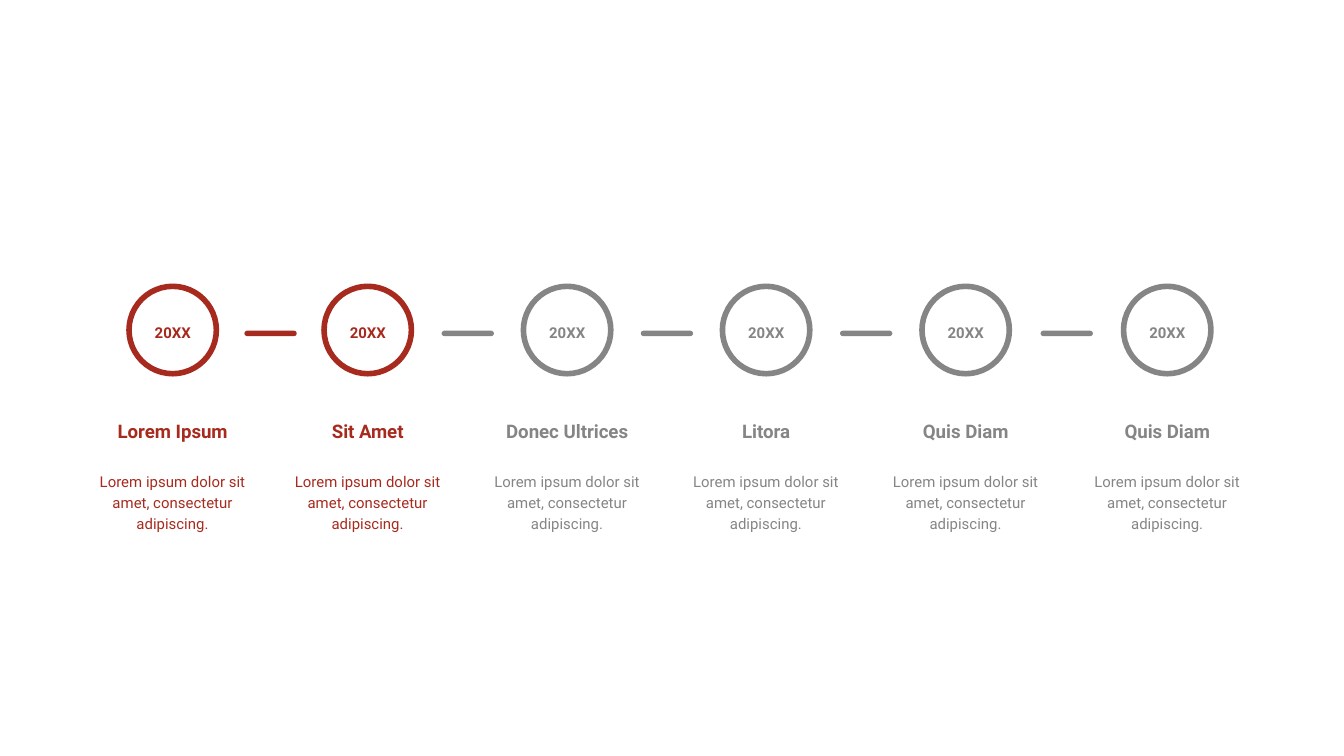
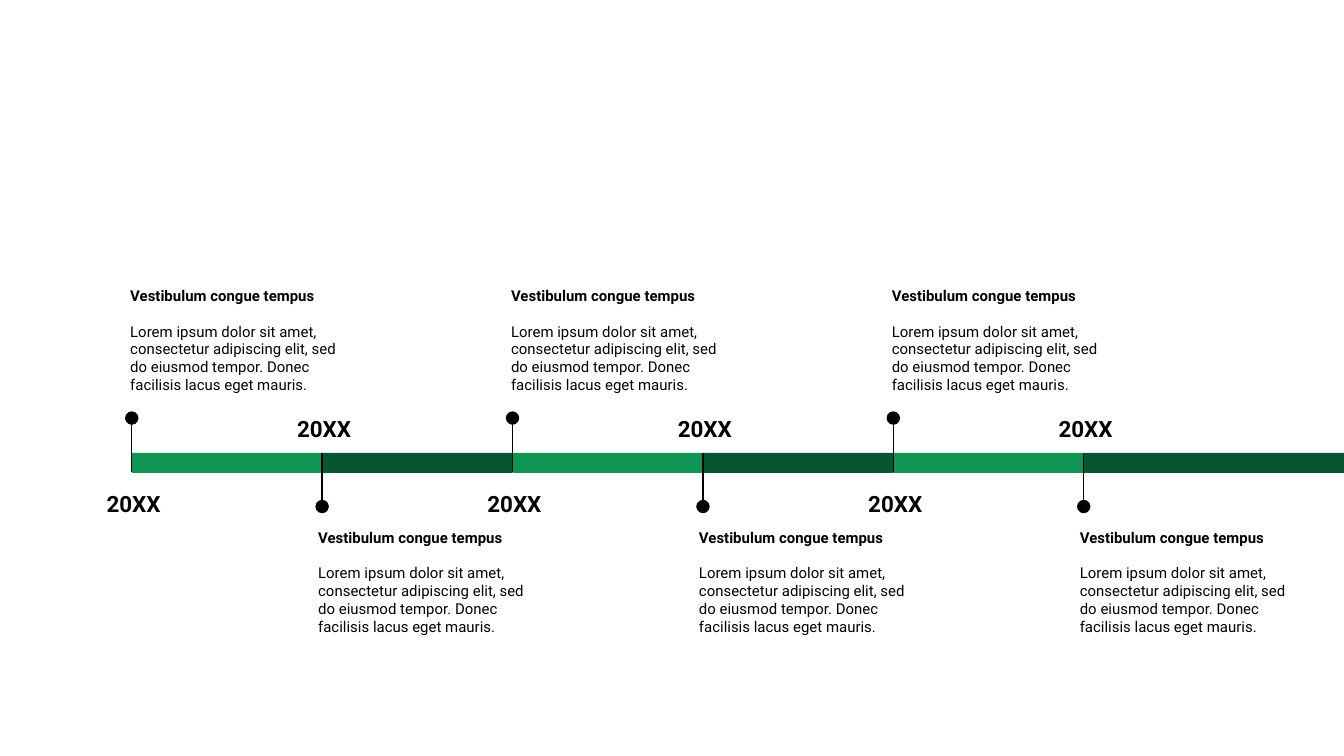
from dataclasses import dataclass

from lxml import etree
from pptx import Presentation
from pptx.dml.color import RGBColor
from pptx.enum.shapes import MSO_CONNECTOR, MSO_SHAPE
from pptx.enum.text import MSO_ANCHOR, PP_ALIGN
from pptx.oxml.ns import qn
from pptx.util import Pt

OVAL = MSO_SHAPE.OVAL
RECT = MSO_SHAPE.RECTANGLE
ROUND = MSO_SHAPE.ROUNDED_RECTANGLE
LINE = MSO_CONNECTOR.STRAIGHT
LEFT, MID = PP_ALIGN.LEFT, PP_ALIGN.CENTER
TOP, BASE = MSO_ANCHOR.TOP, MSO_ANCHOR.BOTTOM


@dataclass(frozen=True)
class Theme:
    font: str = "Roboto"
    red: str = "A72A1E"
    gray: str = "858585"
    black: str = "000000"
    green: str = "0E9453"
    dark: str = "085631"
    small: float = 8
    head: float = 10
    year: float = 12
    inset: float = 7.2
    lead: float = 1.15
    after: float = 16
    ring: float = 3
    hair: float = 0.75


WIDTH, HEIGHT = 720, 405

# Centre of the step, width of its text, heading
STEPS = [
    (92.5, 103, "Lorem Ipsum"),
    (197, 103, "Sit Amet"),
    (303.8, 107.3, "Donec Ultrices"),
    (410.4, 103, "Litora"),
    (517.3, 107.3, "Quis Diam"),
    (625.3, 107.3, "Quis Diam"),
]
DONE = 2
BRIEF = "Lorem ipsum dolor sit amet, consectetur adipiscing."

START, PITCH, COUNT = 70.6, 102, 6
BAND_TOP, BAND_TALL = 242.6, 10.8
DOT = 7.2
LABEL = "20XX"
TOPIC = "Vestibulum congue tempus"
STORY = ("Lorem ipsum dolor sit amet, consectetur adipiscing elit, "
         "sed do eiusmod tempor. Donec facilisis lacus eget mauris.")

# Heights and shifts for pins that point up and pins that point down
UP = {"year": 253.4, "note": 146.2, "shift": -7.9, "dot": 220.4,
      "line": (224.6, 252.7)}
DOWN = {"year": 213.1, "note": 275.8, "shift": -9.2, "dot": 267.8,
        "line": (270.7, 242.6)}


class Deck:
    def __init__(self, theme):
        self.theme = theme
        self.file = Presentation()
        self.file.slide_width = Pt(WIDTH)
        self.file.slide_height = Pt(HEIGHT)
        self.page = self.host = None

    def slide(self):
        self.page = self.file.slides.add_slide(self.file.slide_layouts[6])
        self.host = self.page.shapes

    def group(self):
        """Send the elements that follow to a new group."""
        self.host = self.page.shapes.add_group_shape().shapes

    def leave(self):
        """Send the elements that follow to the slide itself."""
        self.host = self.page.shapes

    def shape(self, kind, box, fill=None, edge=None):
        item = self.host.add_shape(kind, *map(Pt, box))
        item.shadow.inherit = False
        if fill:
            item.fill.solid()
            item.fill.fore_color.rgb = RGBColor.from_string(fill)
        else:
            item.fill.background()
        if edge:
            item.line.color.rgb = RGBColor.from_string(edge)
            item.line.width = Pt(self.theme.ring)
        else:
            item.line.fill.background()
        return item

    def line(self, x, top, end):
        item = self.host.add_connector(LINE, Pt(x), Pt(top), Pt(x), Pt(end))
        item.line.color.rgb = RGBColor.from_string(self.theme.black)
        item.line.width = Pt(self.theme.hair)
        etree.SubElement(item.element.spPr, qn("a:effectLst"))

    def text(self, box, parts, color, size, align=MID, anchor=TOP, lead=None):
        """Fill a box with parts: (words, bold, space after)."""
        frame = self.host.add_textbox(*map(Pt, box)).text_frame
        look = {"word_wrap": True, "vertical_anchor": anchor}
        for side in ("left", "top", "right", "bottom"):
            look[f"margin_{side}"] = Pt(self.theme.inset)
        self.apply(frame, look)
        for i, (words, bold, after) in enumerate(parts):
            para = frame.add_paragraph() if i else frame.paragraphs[0]
            self.apply(para, {"alignment": align, "line_spacing": lead,
                              "space_after": Pt(after)})
            run = para.add_run()
            run.text = words
            self.apply(run.font, {"name": self.theme.font, "size": Pt(size),
                                  "bold": bold})
            run.font.color.rgb = RGBColor.from_string(color)

    @staticmethod
    def apply(item, values):
        for key, value in values.items():
            setattr(item, key, value)


def draw_steps(deck):
    look = deck.theme
    deck.slide()
    for i, (mid, wide, name) in enumerate(STEPS):
        color = look.red if i < DONE else look.gray
        if i:
            gap = (STEPS[i - 1][0] + mid) / 2
            deck.leave()
            bar = deck.shape(ROUND, (gap - 13.8, 177.2, 28, 2.9), color)
            bar.adjustments[0] = 0.5
        deck.group()
        deck.shape(OVAL, (mid - 23.4, 153.4, 46.8, 46.8), edge=color)
        left = mid - wide / 2
        for box, words, bold, after, size, anchor in (
            ((mid - 17.2, 166.3, 34.6, 25.2), LABEL, True, look.after,
             look.small, TOP),
            ((left, 208.8, wide, 35.3), name, True, 0, look.head, BASE),
            ((left, 244.8, wide, 58.3), BRIEF, False, look.after,
             look.small, TOP),
        ):
            deck.text(box, [(words, bold, after)], color, size,
                      anchor=anchor, lead=look.lead)


def draw_pins(deck):
    look = deck.theme
    deck.slide()
    for i in range(COUNT):
        x = START + i * PITCH
        end = x + PITCH if i < COUNT - 1 else WIDTH
        side, fill = (DOWN, look.dark) if i % 2 else (UP, look.green)
        deck.group()
        deck.shape(RECT, (x, BAND_TOP, end - x, BAND_TALL), fill)
        deck.text((x - 28.5, side["year"], 59, 29.5),
                  [(LABEL, True, look.after)], look.black, look.year,
                  lead=look.lead)
        deck.text((x + side["shift"], side["note"], 132.5, 74.2),
                  [(TOPIC, True, 9.6), (STORY, False, look.after)],
                  look.black, look.small, align=LEFT)
        deck.shape(OVAL, (x - DOT / 2, side["dot"], DOT, DOT), look.black)
        deck.line(x, *side["line"])


def main():
    deck = Deck(Theme())
    draw_steps(deck)
    draw_pins(deck)
    deck.file.save("out.pptx")


if __name__ == "__main__":
    main()
